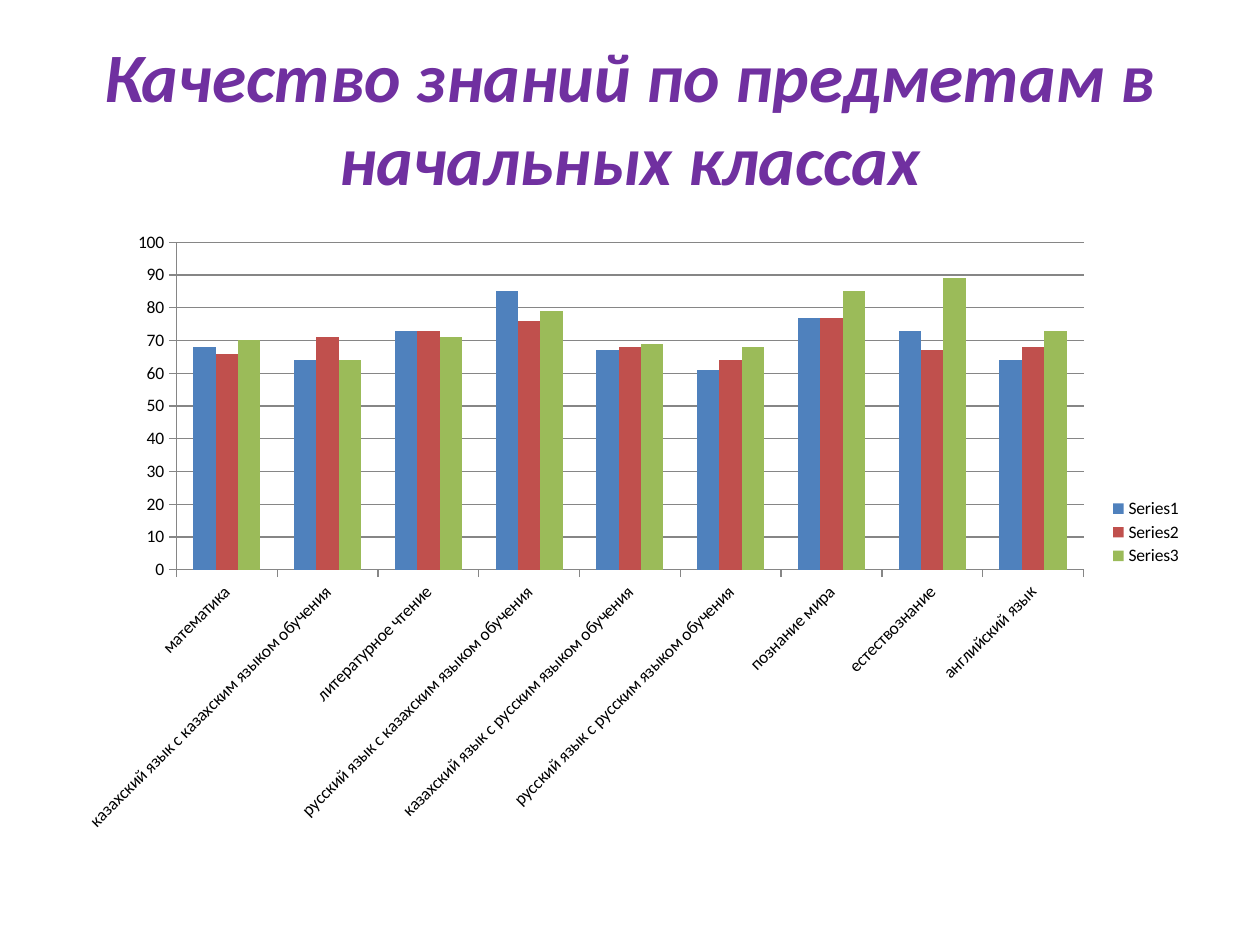
from dataclasses import dataclass

from lxml import etree
from pptx import Presentation
from pptx.chart.data import CategoryChartData
from pptx.dml.color import RGBColor
from pptx.enum.chart import XL_CHART_TYPE, XL_LEGEND_POSITION, XL_TICK_MARK
from pptx.enum.text import MSO_ANCHOR, PP_ALIGN
from pptx.oxml.ns import qn
from pptx.util import Inches, Pt

CLUSTERED = XL_CHART_TYPE.COLUMN_CLUSTERED
LEGEND_RIGHT = XL_LEGEND_POSITION.RIGHT
TICK_OUT = XL_TICK_MARK.OUTSIDE
MIDDLE = MSO_ANCHOR.MIDDLE
CENTER = PP_ALIGN.CENTER


@dataclass(frozen=True)
class Theme:
    font: str = "Calibri"
    title_size: float = 39.6
    chart_size: float = 10
    title: str = "7030A0"
    text: str = "000000"
    axis: str = "868686"


@dataclass(frozen=True)
class Box:
    x: float
    y: float
    w: float
    h: float

    def inches(self) -> list[int]:
        return [Inches(v) for v in (self.x, self.y, self.w, self.h)]


@dataclass(frozen=True)
class Series:
    name: str
    color: str
    values: tuple[int, ...]


THEME = Theme()
TITLE = "Качество знаний по предметам в начальных классах"
TITLE_BOX = Box(0.5, 0.3, 9, 1.25)
CHART_BOX = Box(0.5, 1.75, 9, 4.95)
# Fractions of the chart area
PLOT_LAYOUT = Box(0.1, 0.035, 0.8, 0.525)
LEGEND_LAYOUT = Box(0.92, 0.44, 0.07, 0.12)
LABEL_ANGLE = -45
SUBJECTS = (
    "математика",
    "казахский язык с казахским языком обучения",
    "литературное чтение",
    "русский язык с казахским языком обучения",
    "казахский язык с русским языком обучения",
    "русский язык с русским языком обучения",
    "познание мира",
    "естествознание",
    "английский язык",
)
SERIES = (
    Series("Series1", "4F81BD", (68, 64, 73, 85, 67, 61, 77, 73, 64)),
    Series("Series2", "C0504D", (66, 71, 73, 76, 68, 64, 77, 67, 68)),
    Series("Series3", "9BBB59", (70, 64, 71, 79, 69, 68, 85, 89, 73)),
)


def set_font(font, size: float, color: str, **formats) -> None:
    for key, value in {"name": THEME.font, "size": Pt(size), **formats}.items():
        setattr(font, key, value)
    font.color.rgb = RGBColor.from_string(color)


def set_line(line) -> None:
    line.width = Pt(0.75)
    line.color.rgb = RGBColor.from_string(THEME.axis)


def make_layout(box: Box, inner: bool = False):
    """Return a c:layout element that fixes a chart part to the given fractions."""
    layout = etree.Element(qn("c:layout"))
    manual = etree.SubElement(layout, qn("c:manualLayout"))
    values = {"layoutTarget": "inner"} if inner else {}
    values |= {"xMode": "edge", "yMode": "edge"}
    values |= {"x": box.x, "y": box.y, "w": box.w, "h": box.h}
    for tag, value in values.items():
        etree.SubElement(manual, qn(f"c:{tag}")).set("val", str(value))
    return layout


def place_parts(chart) -> None:
    """Fix the plot and legend positions and slant the category labels."""
    root = chart._chartSpace
    for old in root.xpath(".//c:plotArea/c:layout | .//c:legend/c:layout"):
        old.getparent().remove(old)
    root.xpath(".//c:plotArea")[0].insert(0, make_layout(PLOT_LAYOUT, inner=True))
    root.xpath(".//c:legend/c:legendPos")[0].addnext(make_layout(LEGEND_LAYOUT))
    body = root.xpath(".//c:catAx/c:txPr/a:bodyPr")[0]
    body.set("rot", str(LABEL_ANGLE * 60000))
    body.set("vert", "horz")


def add_title(slide) -> None:
    tf = slide.shapes.add_textbox(*TITLE_BOX.inches()).text_frame
    tf.word_wrap = True
    tf.vertical_anchor = MIDDLE
    p = tf.paragraphs[0]
    p.alignment = CENTER
    r = p.add_run()
    r.text = TITLE
    set_font(r.font, THEME.title_size, THEME.title, bold=True, italic=True)


def add_quality_chart(slide) -> None:
    data = CategoryChartData()
    data.categories = SUBJECTS
    for series in SERIES:
        data.add_series(series.name, series.values)
    chart = slide.shapes.add_chart(CLUSTERED, *CHART_BOX.inches(), data).chart
    chart.has_title = False
    set_font(chart.font, THEME.chart_size, THEME.text)

    plot = chart.plots[0]
    for key, value in {"gap_width": 150, "overlap": 0, "vary_by_categories": False}.items():
        setattr(plot, key, value)
    for drawn, series in zip(plot.series, SERIES):
        drawn.format.fill.solid()
        drawn.format.fill.fore_color.rgb = RGBColor.from_string(series.color)

    for axis in (chart.category_axis, chart.value_axis):
        axis.major_tick_mark = TICK_OUT
        set_line(axis.format.line)
        set_font(axis.tick_labels.font, THEME.chart_size, THEME.text)
    scale = {"minimum_scale": 0, "maximum_scale": 100, "major_unit": 10,
             "has_major_gridlines": True}
    for key, value in scale.items():
        setattr(chart.value_axis, key, value)
    set_line(chart.value_axis.major_gridlines.format.line)

    chart.has_legend = True
    chart.legend.position = LEGEND_RIGHT
    chart.legend.include_in_layout = False
    set_font(chart.legend.font, THEME.chart_size, THEME.text)
    place_parts(chart)


def main() -> None:
    prs = Presentation()
    prs.slide_width, prs.slide_height = Inches(10), Inches(7.5)
    slide = prs.slides.add_slide(prs.slide_layouts[6])
    add_title(slide)
    add_quality_chart(slide)
    prs.save("out.pptx")


if __name__ == "__main__":
    main()
